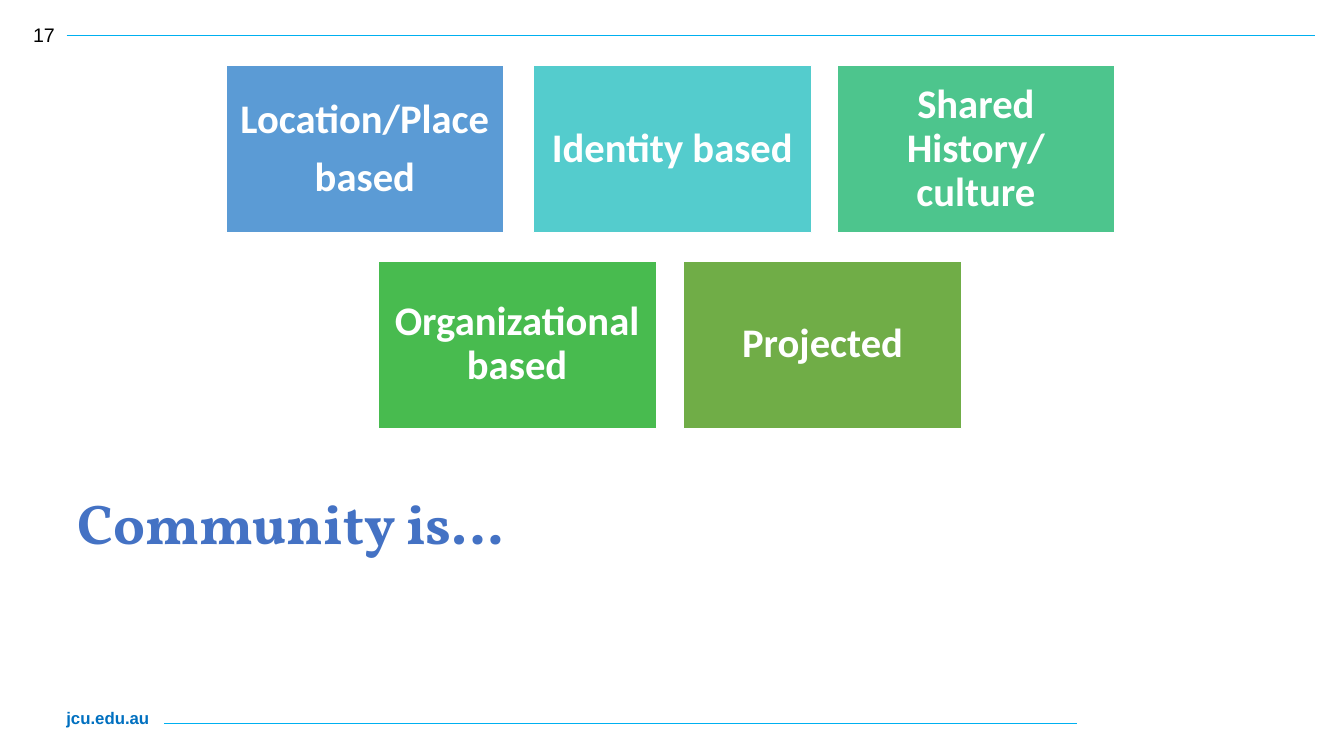
from dataclasses import dataclass

import pptx
import pptx.dml.color
import pptx.enum.shapes
import pptx.enum.text
import pptx.oxml
import pptx.util
from pptx.util import Inches


@dataclass(frozen=True)
class Theme:
    white: str = "FFFFFF"
    black: str = "000000"
    title_blue: str = "4472C4"
    link_blue: str = "0070C0"
    rule: str = "00B0F0"
    title_font: str = "Vollkorn"
    tile_font: str = "Calibri"
    plain_font: str = "Arial"
    title_size: int = 40
    tile_size: int = 29
    number_size: int = 14
    footer_size: int = 12


@dataclass(frozen=True)
class Tile:
    lines: tuple[str, ...]
    left: float
    top: float
    fill: str


@dataclass(frozen=True)
class Rule:
    left: float
    right: float
    y: float


@dataclass(frozen=True)
class Label:
    text: str
    bounds: tuple[float, float, float, float]
    size: int
    color: str
    bold: bool


THEME = Theme()
TILE_WIDTH, TILE_HEIGHT, TILE_INSET = 2.76, 1.66, 0.12
FIRST_ROW, SECOND_ROW = 0.65, 2.59

TILES = (
    Tile(("Location/Place", "based"), 2.24, FIRST_ROW, "5B9BD5"),
    Tile(("Identity based",), 5.29, FIRST_ROW, "54CCCD"),
    Tile(("Shared History/ culture",), 8.3, FIRST_ROW, "4DC58D"),
    Tile(("Organizational based",), 3.75, SECOND_ROW, "48BB4F"),
    Tile(("Projected",), 6.78, SECOND_ROW, "70AD47"),
)
RULES = (Rule(1.63, 10.68, 7.18), Rule(0.66, 13.04, 0.35))
LABELS = (
    Label("jcu.edu.au", (0.56, 6.97, 1.23, 0.3), THEME.footer_size, THEME.link_blue, True),
    Label("17", (0.23, 0.18, 0.5, 0.37), THEME.number_size, THEME.black, False),
)


def rgb(color: str) -> pptx.dml.color.RGBColor:
    return pptx.dml.color.RGBColor.from_string(color)


def apply_format(target: object, values: dict[str, object]) -> None:
    for name, value in values.items():
        setattr(target, name, value)


def style_font(font: object, name: str, size: int, color: str, bold: bool) -> None:
    apply_format(font, {"name": name, "size": pptx.util.Pt(size), "bold": bold})
    font.color.rgb = rgb(color)


def draw_rule(page: object, rule: Rule) -> None:
    line = page.shapes.add_connector(
        pptx.enum.shapes.MSO_CONNECTOR.STRAIGHT,
        Inches(rule.left), Inches(rule.y), Inches(rule.right), Inches(rule.y))
    line.line.color.rgb = rgb(THEME.rule)
    line.line.width = pptx.util.Pt(0.5)
    line._element.spPr.append(pptx.oxml.parse_xml(
        '<a:effectLst xmlns:a="http://schemas.openxmlformats.org/drawingml/2006/main"/>'))


def draw_label(page: object, label: Label) -> None:
    box = page.shapes.add_textbox(*map(Inches, label.bounds))
    box.text_frame.word_wrap = True
    para = box.text_frame.paragraphs[0]
    span = para.add_run()
    span.text = label.text
    style_font(span.font, THEME.plain_font, label.size, label.color, label.bold)


def draw_title(page: object, text: str) -> None:
    title = page.shapes.title
    apply_format(title, {"left": Inches(0.67), "top": Inches(2.45),
                         "width": Inches(11.56), "height": Inches(3.12)})
    title.text_frame.text = text
    apply_format(title.text_frame, {
        "word_wrap": True,
        "auto_size": pptx.enum.text.MSO_AUTO_SIZE.NONE,
        "vertical_anchor": pptx.enum.text.MSO_ANCHOR.BOTTOM})
    para = title.text_frame.paragraphs[0]
    apply_format(para, {"alignment": pptx.enum.text.PP_ALIGN.LEFT, "line_spacing": 0.9})
    style_font(para.runs[0].font, THEME.title_font, THEME.title_size, THEME.title_blue, True)


def draw_tile(page: object, tile: Tile) -> None:
    box = page.shapes.add_shape(
        pptx.enum.shapes.MSO_SHAPE.RECTANGLE,
        Inches(tile.left), Inches(tile.top), Inches(TILE_WIDTH), Inches(TILE_HEIGHT))
    box.shadow.inherit = False
    box.fill.solid()
    box.fill.fore_color.rgb = rgb(tile.fill)
    box.line.color.rgb = rgb(THEME.white)
    box.line.width = pptx.util.Pt(1)
    frame = box.text_frame
    apply_format(frame, {"word_wrap": True,
                         "vertical_anchor": pptx.enum.text.MSO_ANCHOR.MIDDLE})
    apply_format(frame, {f"margin_{side}": Inches(TILE_INSET)
                         for side in ("left", "top", "right", "bottom")})
    frame.text = "\n".join(tile.lines)
    for para in frame.paragraphs:
        apply_format(para, {"alignment": pptx.enum.text.PP_ALIGN.CENTER,
                            "line_spacing": 0.9, "space_after": pptx.util.Pt(10)})
        style_font(para.runs[0].font, THEME.tile_font, THEME.tile_size, THEME.white, True)


def main() -> None:
    deck = pptx.Presentation()
    apply_format(deck, {"slide_width": Inches(13.33), "slide_height": Inches(7.5)})
    page = deck.slides.add_slide(deck.slide_layouts.get_by_name("Title Only"))

    # Header and footer rules
    for rule in RULES:
        draw_rule(page, rule)

    # Title and kinds of community
    draw_title(page, "Community is…")
    for tile in TILES:
        draw_tile(page, tile)

    # Web address and page number
    for label in LABELS:
        draw_label(page, label)

    deck.save("out.pptx")


if __name__ == "__main__":
    main()
